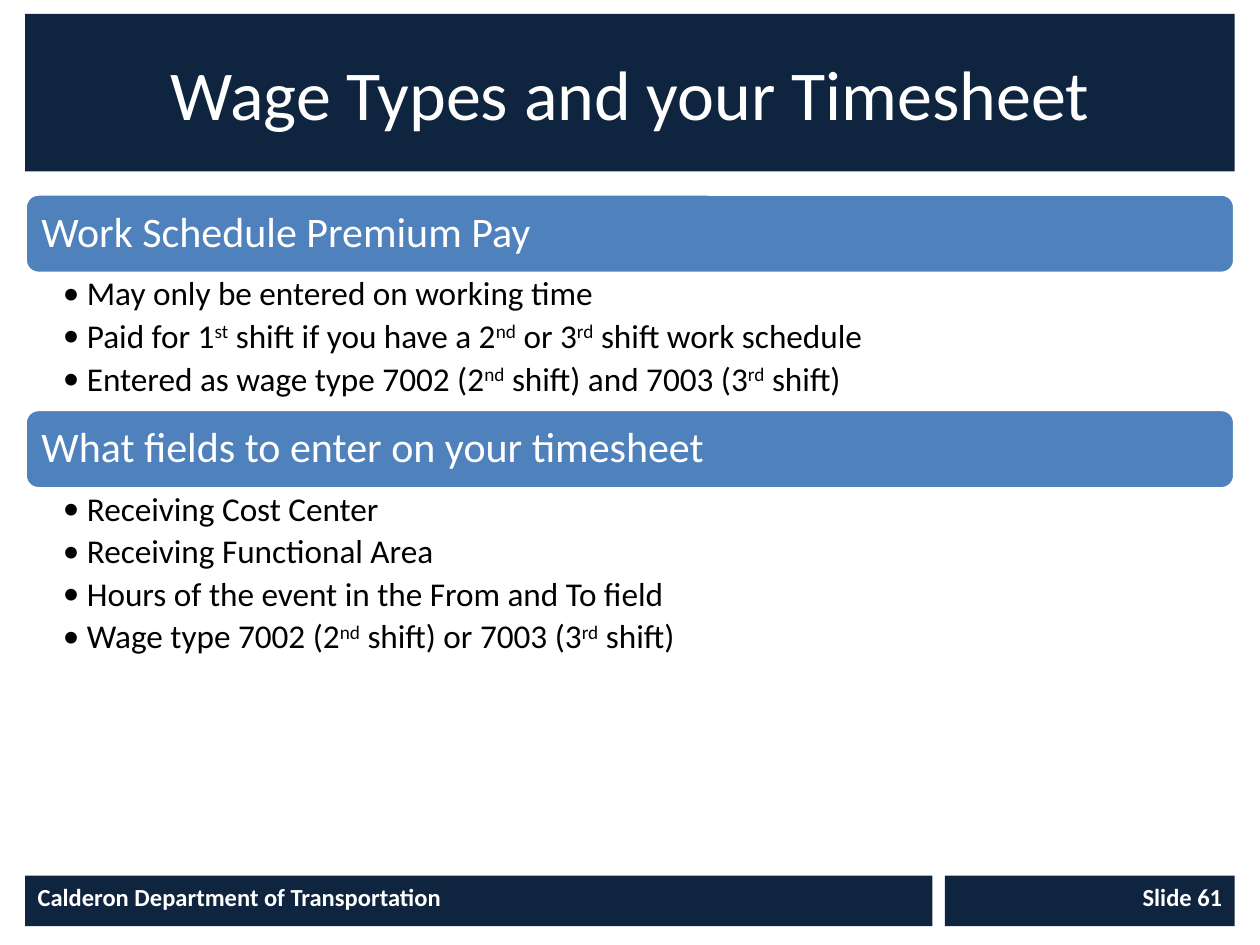
"""Build the slide on wage types and the timesheet."""
import pptx
import pptx.util
import pptx.dml.color
import pptx.enum.shapes
import pptx.enum.text
import lxml.etree
from pptx.oxml.ns import qn

Inches, Pt = pptx.util.Inches, pptx.util.Pt
SHAPE = pptx.enum.shapes.MSO_SHAPE
ALIGN = pptx.enum.text.PP_ALIGN
ANCHOR = pptx.enum.text.MSO_ANCHOR
HEX = {"navy": "0F243E", "blue": "4F81BD", "white": "FFFFFF", "black": "000000"}
COLOR = {name: pptx.dml.color.RGBColor.from_string(code) for name, code in HEX.items()}
LEFT, WIDTH, HEAD = 0.2, 9.6, 0.63


def style(run, size, color, bold=False):
    run.font.name = "Calibri"
    run.font.size = Pt(size)
    run.font.bold = bold
    run.font.color.rgb = COLOR[color]


def add_bar(kind, box, fill, text, size, align, anchor, bold=False):
    bar = slide.shapes.add_shape(kind, *[Inches(n) for n in box])
    bar.shadow.inherit = False
    bar.fill.solid()
    bar.fill.fore_color.rgb = COLOR[fill]
    bar.line.fill.background()
    frame = bar.text_frame
    frame.text = text
    frame.word_wrap = True
    frame.vertical_anchor = anchor
    frame.paragraphs[0].alignment = align
    style(frame.paragraphs[0].runs[0], size, "white", bold)
    return bar


deck = pptx.Presentation()
deck.slide_width, deck.slide_height = Inches(10), Inches(7.5)
slide = deck.slides.add_slide(deck.slide_layouts[6])

groups = [
    (1.54, 1.09, "Work Schedule Premium Pay", [
        "May only be entered on working time",
        "Paid for 1^st^ shift if you have a 2^nd^ or 3^rd^ shift work schedule",
        "Entered as wage type 7002 (2^nd^ shift) and 7003 (3^rd^ shift)",
    ]),
    (3.25, 1.44, "What fields to enter on your timesheet", [
        "Receiving Cost Center",
        "Receiving Functional Area",
        "Hours of the event in the From and To field",
        "Wage type 7002 (2^nd^ shift) or 7003 (3^rd^ shift)",
    ]),
]
for top, height, title, items in groups:
    head = add_bar(SHAPE.ROUNDED_RECTANGLE, (LEFT, top, WIDTH, HEAD), "blue",
                   title, 24, ALIGN.LEFT, ANCHOR.MIDDLE)
    head.line.color.rgb = COLOR["white"]
    head.line.width = Pt(2)
    head.text_frame.paragraphs[0].line_spacing = 0.9

    body = slide.shapes.add_textbox(Inches(LEFT), Inches(top + HEAD),
                                    Inches(WIDTH), Inches(height))
    frame = body.text_frame
    frame.word_wrap = True
    frame.margin_left, frame.margin_right = Inches(0.3), Inches(0.19)
    frame.margin_top = frame.margin_bottom = Inches(0.03)
    for row, item in enumerate(items):
        para = frame.add_paragraph() if row else frame.paragraphs[0]
        para.line_spacing = 0.9
        para.space_after = Pt(3.8)
        props = para._p.get_or_add_pPr()
        props.set("marL", str(Inches(0.19)))
        props.set("indent", str(-Inches(0.19)))
        lxml.etree.SubElement(props, qn("a:buFont")).set("typeface", "Calibri")
        lxml.etree.SubElement(props, qn("a:buChar")).set("char", "•")
        for spot, part in enumerate(item.split("^")):
            run = para.add_run()
            run.text = part
            style(run, 19, "black")
            if spot % 2:
                run.font._element.set("baseline", "30000")

add_bar(SHAPE.RECTANGLE, (LEFT, 6.95, 7.2, 0.4), "navy",
        "Calderon Department of Transportation", 14, ALIGN.LEFT, ANCHOR.TOP, True)
add_bar(SHAPE.RECTANGLE, (7.5, 6.95, 2.3, 0.4), "navy",
        "Slide 61", 14, ALIGN.RIGHT, ANCHOR.TOP, True)
add_bar(SHAPE.RECTANGLE, (LEFT, 0.11, WIDTH, 1.25), "navy",
        "Wage Types and your Timesheet", 40, ALIGN.CENTER, ANCHOR.MIDDLE)

deck.save("out.pptx")
